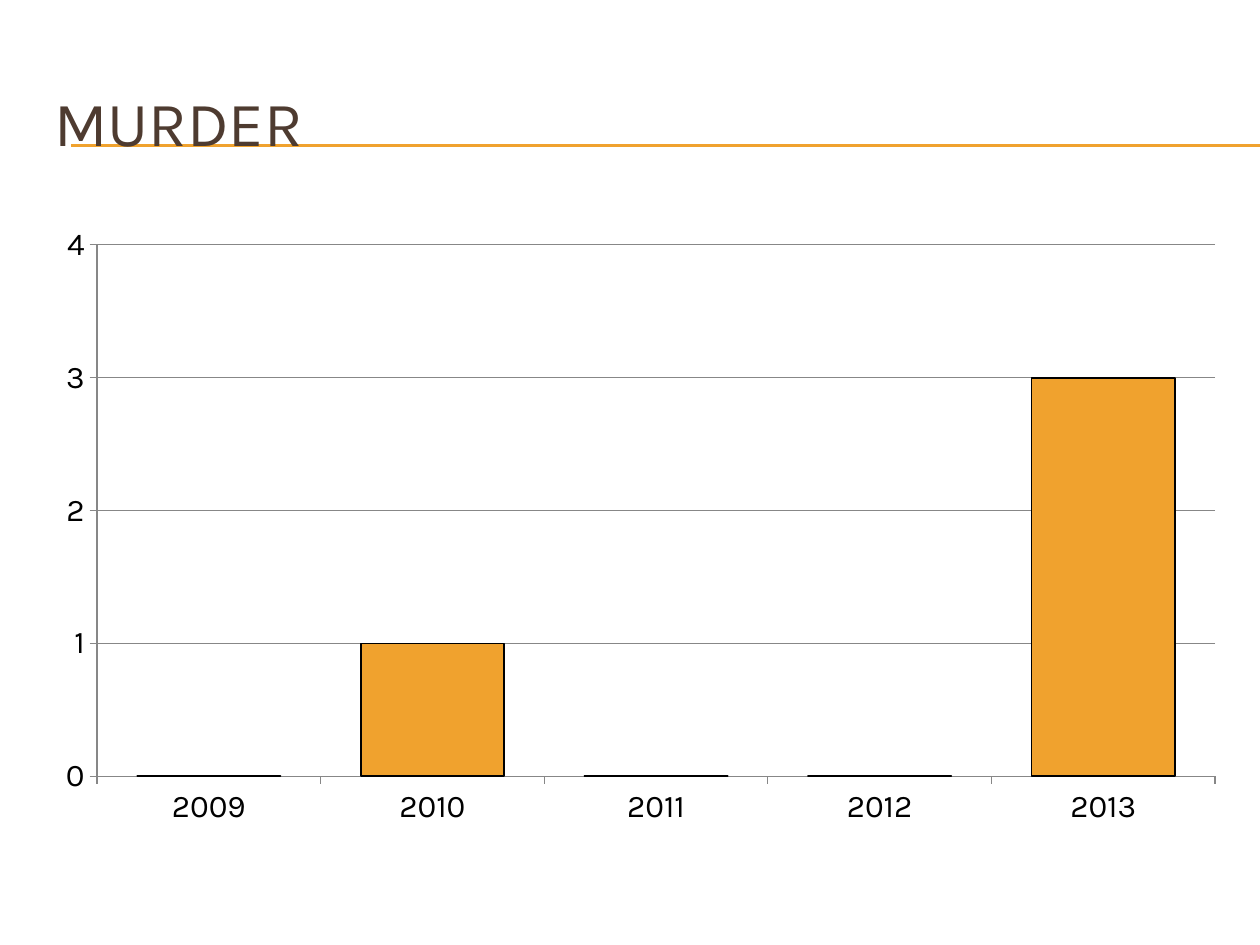
from lxml import etree
from pptx import Presentation
from pptx import util as u
from pptx.chart.data import CategoryChartData
from pptx.dml.color import RGBColor
from pptx.enum import chart as charts, shapes, text
from pptx.oxml.ns import qn

SCALE = 914400 / 126
FONT = "Karla"
BROWN = RGBColor(0x4E, 0x3B, 0x30)
ORANGE = RGBColor(0xF0, 0xA2, 0x2E)
BLACK = RGBColor(0, 0, 0)
GRAY = RGBColor(0x87, 0x87, 0x87)


def px(length):
    """Turn whole pixels into EMU."""
    return u.Emu(round(length * SCALE))


def format_font(font, size, color):
    """Set the typeface, size and colour of a font."""
    font.name = FONT
    font.size = u.Pt(size)
    font.color.rgb = color


def format_line(line, color, width):
    """Set the colour and width of a line."""
    line.color.rgb = color
    line.width = u.Pt(width)


def add_rule(page, left, right, top):
    """Draw a horizontal orange rule without a shadow."""
    rule = page.shapes.add_connector(
        shapes.MSO_CONNECTOR.STRAIGHT, px(left), px(top), px(right), px(top))
    format_line(rule.line, ORANGE, 0.75)
    properties = rule._element.find(qn("p:spPr"))
    etree.SubElement(properties, qn("a:effectLst"))


def add_text(page, words, left, top, width, height, *, size, color):
    """Add a vertically centred text box."""
    box = page.shapes.add_textbox(px(left), px(top), px(width), px(height))
    frame = box.text_frame
    frame.word_wrap = True
    frame.vertical_anchor = text.MSO_ANCHOR.MIDDLE
    span = frame.paragraphs[0].add_run()
    span.text = words
    format_font(span.font, size, color)


def format_axis(axis):
    """Give an axis outside ticks and a gray line."""
    axis.major_tick_mark = charts.XL_TICK_MARK.OUTSIDE
    axis.minor_tick_mark = charts.XL_TICK_MARK.NONE
    format_line(axis.format.line, GRAY, 0.75)


def add_column_chart(page, years, counts, left, top, width, height):
    """Add the yearly column chart."""
    data = CategoryChartData()
    data.categories = years
    data.add_series("Series 1", counts)
    chart = page.shapes.add_chart(
        charts.XL_CHART_TYPE.COLUMN_CLUSTERED,
        px(left), px(top), px(width), px(height), data).chart
    chart.has_legend = False
    chart.has_title = False
    format_font(chart.font, 18, BLACK)

    plot = chart.plots[0]
    plot.gap_width = 56
    plot.overlap = 100
    plot.vary_by_categories = False
    columns = plot.series[0].format
    columns.fill.solid()
    columns.fill.fore_color.rgb = ORANGE
    format_line(columns.line, BLACK, 1)

    format_axis(chart.category_axis)
    values = chart.value_axis
    format_axis(values)
    values.minimum_scale = 0
    values.maximum_scale = 4
    values.major_unit = 1
    values.has_major_gridlines = True
    format_line(values.major_gridlines.format.line, GRAY, 0.75)


def main():
    """Build and save the slide."""
    deck = Presentation()
    deck.slide_width, deck.slide_height = px(1260), px(945)
    page = deck.slides.add_slide(deck.slide_layouts[6])
    for top in (145, 146):
        add_rule(page, 71, 1260, top)
    add_text(page, "MURDER", 42, 63, 1197, 116, size=36, color=BROWN)
    years = [str(year) for year in range(2009, 2014)]
    add_column_chart(page, years, (0, 1, 0, 0, 3), 42, 214, 1197, 624)
    deck.save("out.pptx")


if __name__ == "__main__":
    main()
